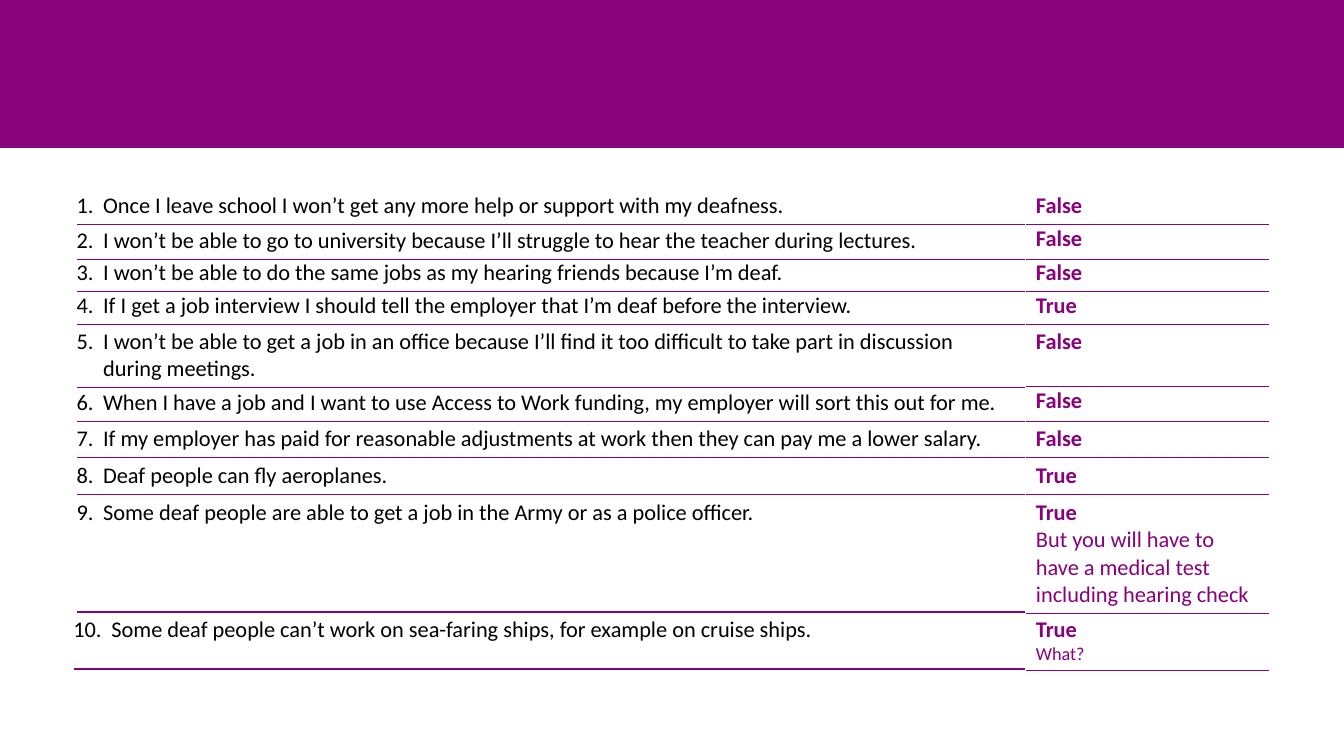
from dataclasses import dataclass

import pptx
import pptx.dml.color
import pptx.enum.shapes
import pptx.oxml
import pptx.oxml.ns
import pptx.util
from pptx.util import Cm

PURPLE = pptx.dml.color.RGBColor(0x87, 0x02, 0x7B)
BLACK = pptx.dml.color.RGBColor(0, 0, 0)
WHITE = pptx.dml.color.RGBColor(0xFF, 0xFF, 0xFF)

FONT = {"name": "Calibri", "size": pptx.util.Pt(16)}
STATEMENT_FONT = FONT | {"bold": False}
VERDICT_FONT = FONT | {"bold": True}
NOTE_FONT = FONT | {"bold": False}
FOLLOW_UP_FONT = NOTE_FONT | {"size": pptx.util.Pt(13)}

# Lengths in centimetres
SLIDE_WIDTH, SLIDE_HEIGHT = 33.88, 19.05
BAND_HEIGHT = 3.73
ANSWER_LEFT, ANSWER_WIDTH = 25.86, 6.12


@dataclass
class Question:
    top: float
    statement: str
    verdict: str
    height: float = 0.94
    left: float = 1.93
    hanging: float = 0.67
    answer_raise: float = 0  # how much higher the answer starts
    note: str = ""
    follow_up: str = ""


QUESTIONS = [
    Question(4.72, "Once I leave school I won’t get any more help or support with my deafness.", "False"),
    Question(5.59, "I won’t be able to go to university because I’ll struggle to hear the teacher "
             "during lectures.", "False", answer_raise=0.05),
    Question(6.4, "I won’t be able to do the same jobs as my hearing friends because I’m deaf.", "False"),
    Question(7.24, "If I get a job interview I should tell the employer that I’m deaf before the "
             "interview.", "True"),
    Question(8.13, "I won’t be able to get a job in an office because I’ll find it too difficult to "
             "take part in discussion during meetings.", "False", height=1.6),
    Question(9.68, "When I have a job and I want to use Access to Work funding, my employer will sort "
             "this out for me.", "False", answer_raise=0.05),
    Question(10.59, "If my employer has paid for reasonable adjustments at work then they can pay me "
             "a lower salary.", "False"),
    Question(11.51, "Deaf people can fly aeroplanes.", "True"),
    Question(12.45, "Some deaf people are able to get a job in the Army or as a police officer.", "True",
             height=2.97, note="But you will have to have a medical test including hearing check"),
    Question(15.39, "Some deaf people can’t work on sea-faring ships, for example on cruise ships.", "True",
             height=1.47, left=1.85, hanging=0.96, follow_up="What?"),
]


def add_run(paragraph, text: str, font: dict, color) -> None:
    run = paragraph.add_run()
    run.text = text
    for attribute, value in font.items():
        setattr(run.font, attribute, value)
    run.font.color.rgb = color


def add_border(cell, side: str, color) -> None:
    """Draw one side of a cell, or hide it when there is no colour."""
    fill = (f'<a:solidFill><a:srgbClr val="{color}"/></a:solidFill>'
            if color is not None else "<a:noFill/>")
    cell._tc.get_or_add_tcPr().append(pptx.oxml.parse_xml(
        f'<a:ln{side} {pptx.oxml.ns.nsdecls("a")} w="12700">{fill}</a:ln{side}>'))


def add_cell(slide, left: float, top: float, width: float, height: float, right_border):
    """Add a one-cell table with a purple rule below and return its cell."""
    table = slide.shapes.add_table(1, 1, Cm(left), Cm(top), Cm(width), Cm(height)).table
    for banding in ("first_row", "horz_banding"):
        setattr(table, banding, False)
    cell = table.cell(0, 0)
    borders = {"L": WHITE, "R": right_border, "T": None, "B": PURPLE}
    for side, color in borders.items():
        add_border(cell, side, color)
    cell.fill.background()
    return cell


def add_statement(slide, number: int, question: Question) -> None:
    cell = add_cell(slide, question.left, question.top, ANSWER_LEFT - question.left,
                    question.height, WHITE)
    cell.margin_left = 0
    paragraph = cell.text_frame.paragraphs[0]
    hanging = Cm(question.hanging)
    for attribute, value in {"marL": hanging, "indent": -hanging}.items():
        paragraph._p.get_or_add_pPr().set(attribute, str(int(value)))
    add_run(paragraph, f"{number}.\t{question.statement}", STATEMENT_FONT, BLACK)


def add_answer(slide, question: Question) -> None:
    cell = add_cell(slide, ANSWER_LEFT, question.top - question.answer_raise, ANSWER_WIDTH,
                    question.height + question.answer_raise, None)
    verdict = cell.text_frame.paragraphs[0]
    add_run(verdict, question.verdict, VERDICT_FONT, PURPLE)
    if question.note:
        verdict.add_line_break()
        add_run(verdict, question.note, NOTE_FONT, PURPLE)
    if question.follow_up:
        add_run(cell.text_frame.add_paragraph(), question.follow_up, FOLLOW_UP_FONT, PURPLE)


def main() -> None:
    presentation = pptx.Presentation()
    presentation.slide_width = Cm(SLIDE_WIDTH)
    presentation.slide_height = Cm(SLIDE_HEIGHT)
    slide = presentation.slides.add_slide(presentation.slide_layouts[6])

    # Header band
    band = slide.shapes.add_shape(pptx.enum.shapes.MSO_SHAPE.RECTANGLE, 0, 0,
                                  Cm(SLIDE_WIDTH), Cm(BAND_HEIGHT))
    band.shadow.inherit = False
    band.fill.solid()
    band.fill.fore_color.rgb = PURPLE
    band.line.fill.background()

    # Quiz statements and their answers
    for number, question in enumerate(QUESTIONS, start=1):
        add_statement(slide, number, question)
        add_answer(slide, question)

    presentation.save("out.pptx")


if __name__ == "__main__":
    main()
